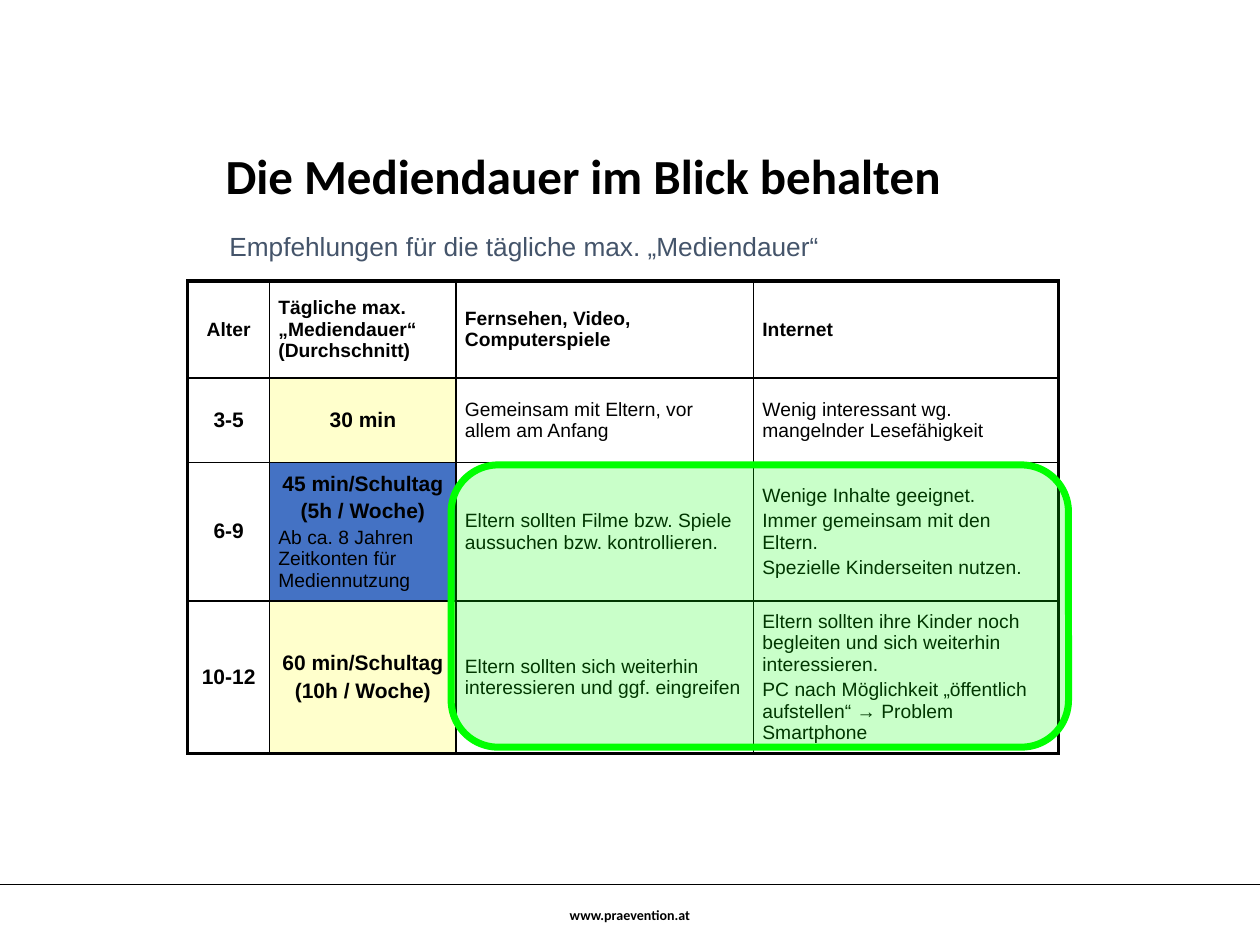
import pptx
import pptx.dml.color
import pptx.enum.shapes
import pptx.enum.text
import pptx.oxml
import pptx.oxml.ns
import pptx.util

Pt = pptx.util.Pt
RGBColor = pptx.dml.color.RGBColor
ALIGN = pptx.enum.text.PP_ALIGN
MIDDLE = pptx.enum.text.MSO_ANCHOR.MIDDLE
SHAPE = pptx.enum.shapes.MSO_SHAPE

BLACK = RGBColor(0x00, 0x00, 0x00)
SLATE = RGBColor(0x44, 0x54, 0x6A)
CREAM = RGBColor(0xFF, 0xFF, 0xCC)
BLUE = RGBColor(0x44, 0x72, 0xC4)
GREEN = RGBColor(0x00, 0xFF, 0x00)

COLUMN_WIDTHS = [46.8, 106.6, 170, 174.2]
ROW_HEIGHTS = [55.4, 48.2, 79.2, 70.6]

HEADING = {"size": 11, "bold": True, "align": ALIGN.LEFT}
CENTRED_HEADING = {"size": 11, "bold": True, "align": ALIGN.CENTER}
KEY = {"size": 12, "bold": True, "align": ALIGN.CENTER}
BODY = {"size": 11, "bold": False, "align": ALIGN.LEFT}

# Each cell is a list of (text, style) paragraphs.
ROWS = [
    [[("Alter", CENTRED_HEADING)],
     [("Tägliche max. „Mediendauer“ (Durchschnitt)", HEADING)],
     [("Fernsehen, Video, Computerspiele", HEADING)],
     [("Internet", HEADING)]],
    [[("3-5", KEY)],
     [("30 min", KEY)],
     [("Gemeinsam mit Eltern, vor allem am Anfang", BODY)],
     [("Wenig interessant wg. mangelnder Lesefähigkeit", BODY)]],
    [[("6-9", KEY)],
     [("45 min/Schultag", KEY), ("(5h / Woche)", KEY),
      ("Ab ca. 8 Jahren Zeitkonten für Mediennutzung", BODY)],
     [("Eltern sollten Filme bzw. Spiele aussuchen bzw. kontrollieren.", BODY)],
     [("Wenige Inhalte geeignet.", BODY),
      ("Immer gemeinsam mit den Eltern.", BODY),
      ("Spezielle Kinderseiten nutzen.", BODY)]],
    [[("10-12", KEY)],
     [("60 min/Schultag", KEY), ("(10h / Woche)", KEY)],
     [("Eltern sollten sich weiterhin interessieren und ggf. eingreifen", BODY)],
     [("Eltern sollten ihre Kinder noch begleiten und sich weiterhin interessieren.", BODY),
      ("PC nach Möglichkeit „öffentlich aufstellen“ → Problem Smartphone", BODY)]],
]
DURATION_FILLS = {1: CREAM, 2: BLUE, 3: CREAM}


def set_attributes(target, values):
    for name, value in values.items():
        setattr(target, name, value)


def format_font(font, name, size, color, bold):
    set_attributes(font, {"name": name, "size": Pt(size), "bold": bold})
    font.color.rgb = color


def add_title(slide, text):
    title = slide.shapes.title
    set_attributes(title, {"left": Pt(121.7), "top": Pt(78.5),
                           "width": Pt(450.7), "height": Pt(46.8)})
    title.text_frame.text = text
    set_attributes(title.text_frame, {"vertical_anchor": MIDDLE, "word_wrap": True})
    paragraph = title.text_frame.paragraphs[0]
    set_attributes(paragraph, {"alignment": ALIGN.LEFT, "line_spacing": 0.9})
    format_font(paragraph.font, "Calibri", 28, BLACK, True)


def add_label(slide, text, box, font_values, frame_values):
    text_box = slide.shapes.add_textbox(*map(Pt, box))
    frame = text_box.text_frame
    frame.text = text
    set_attributes(frame, frame_values)
    frame.paragraphs[0].alignment = ALIGN.CENTER
    format_font(frame.paragraphs[0].font, *font_values)


def set_border(cell, side, width):
    """Draw one black edge of a cell; side is L, R, T or B."""
    line = pptx.oxml.parse_xml(
        f'<a:ln{side} {pptx.oxml.ns.nsdecls("a")} w="{Pt(width)}">'
        f'<a:solidFill><a:srgbClr val="{BLACK}"/></a:solidFill></a:ln{side}>')
    cell._tc.get_or_add_tcPr().append(line)


def fill_cell(cell, paragraphs):
    set_attributes(cell, {"vertical_anchor": MIDDLE,
                          "margin_left": Pt(5), "margin_right": Pt(5),
                          "margin_top": Pt(2.9), "margin_bottom": Pt(2.9)})
    frame = cell.text_frame
    for index, (text, style) in enumerate(paragraphs):
        paragraph = frame.add_paragraph() if index else frame.paragraphs[0]
        paragraph.text = text
        paragraph.alignment = style["align"]
        paragraph.space_before = Pt(0.2 * style["size"] if index else 0)
        format_font(paragraph.font, "Arial", style["size"], BLACK, style["bold"])


def add_media_table(slide):
    last_row, last_column = len(ROWS) - 1, len(COLUMN_WIDTHS) - 1
    table = slide.shapes.add_table(
        len(ROWS), len(COLUMN_WIDTHS), Pt(107.3), Pt(160.6),
        Pt(sum(COLUMN_WIDTHS)), Pt(sum(ROW_HEIGHTS))).table
    set_attributes(table, {"first_row": False, "horz_banding": False})
    for column, width in zip(table.columns, COLUMN_WIDTHS):
        column.width = Pt(width)
    for row, height in zip(table.rows, ROW_HEIGHTS):
        row.height = Pt(height)
    for r, row_content in enumerate(ROWS):
        for c, paragraphs in enumerate(row_content):
            cell = table.cell(r, c)
            fill_cell(cell, paragraphs)
            outer = {"L": c == 0, "R": c == last_column, "T": r == 0, "B": r == last_row}
            for side, is_outer in outer.items():
                set_border(cell, side, 2.25 if is_outer else 1)
            if c == 1 and r in DURATION_FILLS:
                cell.fill.solid()
                cell.fill.fore_color.rgb = DURATION_FILLS[r]
            else:
                cell.fill.background()


def add_highlight(slide):
    shape = slide.shapes.add_shape(SHAPE.ROUNDED_RECTANGLE,
                                   Pt(257.8), Pt(265.7), Pt(352.8), Pt(161.3))
    shape.shadow.inherit = False
    shape.fill.solid()
    shape.fill.fore_color.rgb = GREEN
    color = shape._element.spPr.find(".//" + pptx.oxml.ns.qn("a:srgbClr"))
    color.append(pptx.oxml.parse_xml(
        f'<a:alpha {pptx.oxml.ns.nsdecls("a")} val="21000"/>'))
    shape.line.color.rgb = GREEN
    shape.line.width = Pt(4)


def add_footer_line(slide):
    line = slide.shapes.add_connector(pptx.enum.shapes.MSO_CONNECTOR.STRAIGHT,
                                      Pt(0), Pt(505.5), Pt(720), Pt(505.5))
    line.line.color.rgb = BLACK
    line.line.width = Pt(1)
    line._element.spPr.append(pptx.oxml.parse_xml(
        f'<a:effectLst {pptx.oxml.ns.nsdecls("a")}/>'))


def main():
    presentation = pptx.Presentation()
    set_attributes(presentation, {"slide_width": Pt(720), "slide_height": Pt(540)})
    slide = presentation.slides.add_slide(presentation.slide_layouts[5])
    add_footer_line(slide)
    add_label(slide, "www.praevention.at", (279, 512, 162, 21.6),
              ("Calibri", 8, BLACK, True),
              {"word_wrap": True, "vertical_anchor": MIDDLE})
    add_title(slide, "Die Mediendauer im Blick behalten")
    add_media_table(slide)
    add_label(slide, "Empfehlungen für die tägliche max. „Mediendauer“",
              (121.7, 128.2, 355.7, 25.2), ("Arial", 15, SLATE, False),
              {"word_wrap": False,
               "auto_size": pptx.enum.text.MSO_AUTO_SIZE.SHAPE_TO_FIT_TEXT})
    add_highlight(slide)
    presentation.save("out.pptx")


if __name__ == "__main__":
    main()
